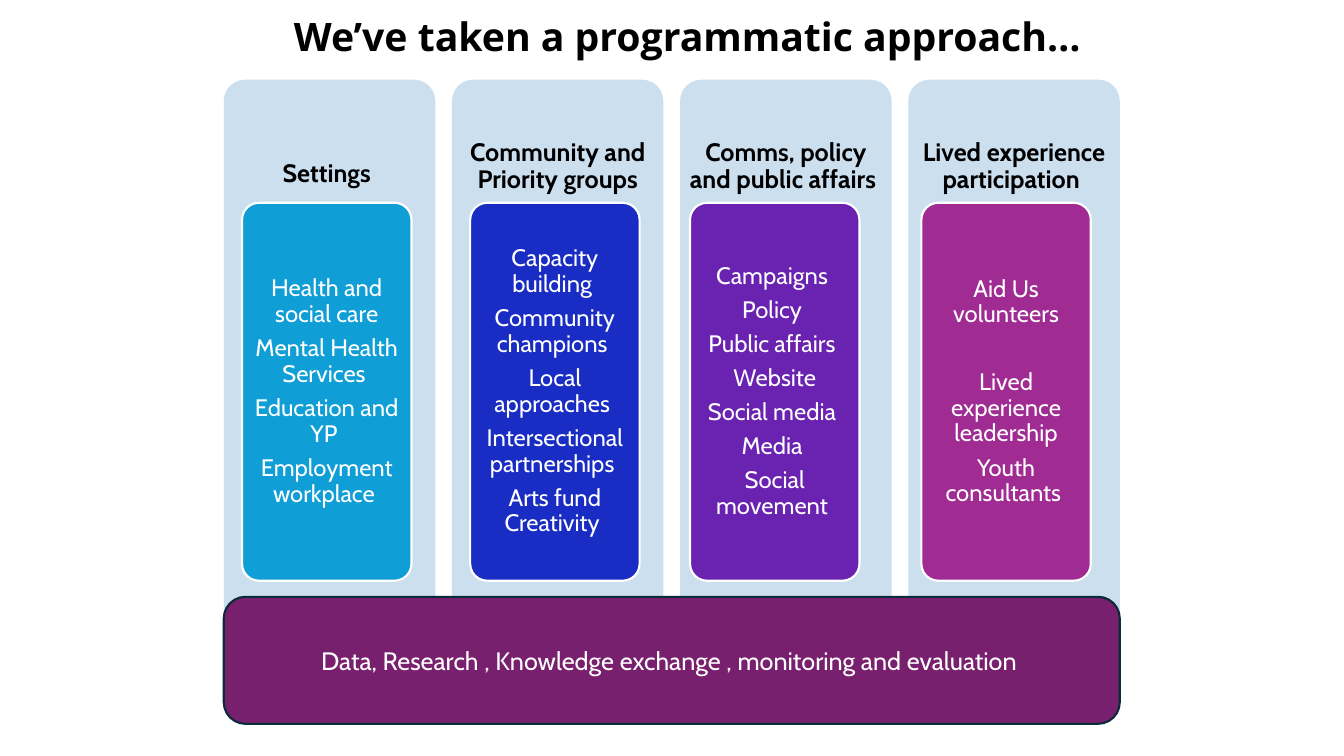
from pptx import Presentation
from pptx.dml.color import RGBColor
from pptx.enum.shapes import MSO_SHAPE as SHAPE
from pptx.enum.text import MSO_ANCHOR as ANCHOR, PP_ALIGN as ALIGN
from pptx.util import Cm, Pt

PILLAR_W, PILLAR_H, PILLAR_STEP = 5.33, 14.65, 5.75
LEFT, TOP = 5.64, 2.01

# Heading, panel colour, panel offset, heading drop, items
PILLARS = [
    ("Settings ", "0F9ED5", 0.46, 0.38,
     ["Health and social care", "Mental Health Services ",
      "Education and YP ", "Employment workplace "]),
    ("Community and Priority groups", "192CC3", 0.46, 0,
     ["Capacity building ", "Community champions ", "Local approaches ",
      "Intersectional partnerships ", "Arts fund Creativity "]),
    ("Comms, policy and public affairs ", "6A22B1", 0.25, 0,
     ["Campaigns ", "Policy ", "Public affairs ", "Website",
      "Social media ", "Media ", "Social movement "]),
    ("Lived experience participation ", "A02B93", 0.33, 0,
     ["Aid Us volunteers", "Lived experience leadership",
      "Youth consultants "]),
]
SPACED_ITEM = "Lived experience leadership"


def rgb(value):
    return RGBColor.from_string(value)


def add_box(s, x, y, w, h, fill, line=None, adj=0.1):
    sp = s.shapes.add_shape(SHAPE.ROUNDED_RECTANGLE, Cm(x), Cm(y), Cm(w), Cm(h))
    sp.adjustments[0] = adj
    sp.shadow.inherit = False
    sp.fill.solid()
    sp.fill.fore_color.rgb = rgb(fill)
    if line:
        sp.line.color.rgb = rgb(line)
        sp.line.width = Pt(1.5)
    else:
        sp.line.fill.background()
    return sp


def set_text(sp, lines, size, color, font="Cabin", bold=False,
             margins=(0.25, 0.13), spacing=1, after=0):
    tf = sp.text_frame
    tf.word_wrap = True
    tf.vertical_anchor = ANCHOR.MIDDLE
    tf.margin_left = tf.margin_right = Cm(margins[0])
    tf.margin_top = tf.margin_bottom = Cm(margins[1])
    for i, line in enumerate(lines):
        p = tf.add_paragraph() if i else tf.paragraphs[0]
        p.text = line
        p.alignment = ALIGN.CENTER
        p.line_spacing = spacing
        p.space_after = Pt(after)
        p.font.name, p.font.size, p.font.bold = font, Pt(size), bold
        p.font.color.rgb = rgb(color)
    return tf


def add_title(s, x, y, w, h):
    sp = s.shapes.add_textbox(Cm(x), Cm(y), Cm(w), Cm(h))
    set_text(sp, ["We’ve taken a programmatic approach…"], 28, "000000",
             font="Open Sans", bold=True)


def add_pillar(s, x, y, w, h, heading, color, offset, drop, items):
    add_box(s, x, y, w, h, "CCDFEF")
    # Heading
    sp = s.shapes.add_textbox(Cm(x), Cm(y), Cm(w), Cm(0.3 * h))
    tf = set_text(sp, [heading], 18, "000000", bold=True,
                  margins=(0.18, 0.18), spacing=0.9)
    tf.margin_top = Cm(0.18 + drop)
    # Panel of items
    panel = add_box(s, x + offset, y + 3.1, 4.27, 0.65 * h, color, "FFFFFF")
    tf = set_text(panel, items, 17, "FFFFFF", margins=(0.13, 0.1),
                  spacing=0.9, after=6)
    for p in tf.paragraphs:
        if p.text == SPACED_ITEM:
            p.space_before = Pt(24)


def add_base(s, x, y, w, h):
    sp = add_box(s, x, y, w, h, "78206E", "092A39", adj=0.17)
    set_text(sp, ["Data, Research , Knowledge exchange , monitoring and evaluation "],
             18, "FFFFFF")


def main():
    prs = Presentation()
    prs.slide_width, prs.slide_height = Cm(33.87), Cm(19.05)
    s = prs.slides.add_slide(prs.slide_layouts[6])
    add_title(s, 4.29, 0.1, 26.06, 1.63)
    for i, pillar in enumerate(PILLARS):
        add_pillar(s, LEFT + i * PILLAR_STEP, TOP, PILLAR_W, PILLAR_H, *pillar)
    add_base(s, LEFT, 15.04, 3 * PILLAR_STEP + PILLAR_W, 3.2)
    prs.save("out.pptx")


if __name__ == "__main__":
    main()
